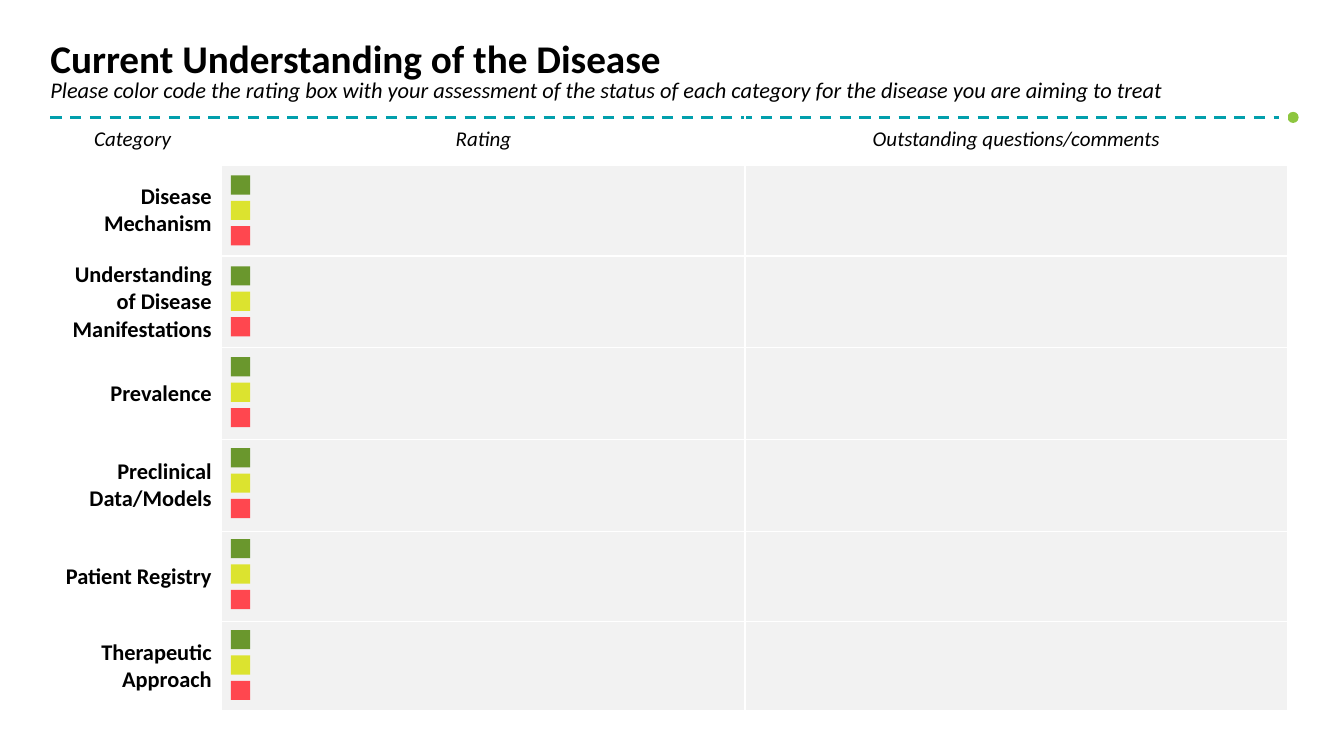
"""Build the disease understanding rating slide."""
from dataclasses import dataclass

from lxml.etree import SubElement
from pptx import Presentation
from pptx.dml.color import RGBColor
from pptx.enum.dml import MSO_LINE
from pptx.enum.shapes import MSO_CONNECTOR, MSO_SHAPE
from pptx.enum.text import MSO_ANCHOR, PP_ALIGN
from pptx.oxml.ns import qn
from pptx.util import Inches, Pt


@dataclass(frozen=True)
class Theme:
    font: str = "Calibri"
    text: str = "000000"
    rule: str = "019FAC"
    dot: str = "8DC63F"
    cell: str = "F2F2F2"
    border: str = "FFFFFF"
    ratings: tuple = ("6A972D", "DCE32F", "FF474F")
    title_size: int = 28
    body_size: int = 16
    header_size: int = 15


theme = Theme()


def set_font(font, size, bold=False, italic=False):
    font.name = theme.font
    font.size = Pt(size)
    font.bold = bold
    font.italic = italic
    font.color.rgb = RGBColor.from_string(theme.text)


def add_mark(kind, left, top, size, color):
    mark = page.shapes.add_shape(kind, Inches(left), Inches(top), Inches(size), Inches(size))
    mark.shadow.inherit = False
    mark.fill.solid()
    mark.fill.fore_color.rgb = RGBColor.from_string(color)
    mark.line.fill.background()


deck = Presentation()
deck.slide_width = Inches(13.33)
deck.slide_height = Inches(7.5)
page = deck.slides.add_slide(deck.slide_layouts[6])

rule = page.shapes.add_connector(
    MSO_CONNECTOR.STRAIGHT, Inches(0.5), Inches(1.17), Inches(12.69), Inches(1.17))
rule.line.color.rgb = RGBColor.from_string(theme.rule)
rule.line.width = Pt(2)
rule.line.dash_style = MSO_LINE.DASH
SubElement(rule.element.spPr, qn("a:effectLst"))
add_mark(MSO_SHAPE.OVAL, 12.77, 1.11, 0.11, theme.dot)

title_box = page.shapes.add_textbox(Inches(0.5), Inches(0.41), Inches(12.33), Inches(0.61))
frame = title_box.text_frame
frame.word_wrap = True
frame.vertical_anchor = MSO_ANCHOR.BOTTOM
frame.margin_left = frame.margin_right = frame.margin_top = frame.margin_bottom = 0
para = frame.paragraphs[0]
para.line_spacing = 0.8
span = para.add_run()
span.text = "Current Understanding of the Disease"
set_font(span.font, theme.title_size, bold=True)
para.add_line_break()
span = para.add_run()
span.text = ("Please color code the rating box with your assessment of the status "
             "of each category for the disease you are aiming to treat")
set_font(span.font, theme.body_size, italic=True)

headers = ["Category", "Rating", "Outstanding questions/comments"]
categories = ["Disease Mechanism", "Understanding of Disease Manifestations", "Prevalence",
              "Preclinical Data/Models", "Patient Registry", "Therapeutic Approach"]
column_widths = [1.77, 5.19, 5.38]
row_heights = [0.49, 0.91, 0.91, 0.91, 0.91, 0.9, 0.88]

table = page.shapes.add_table(
    len(row_heights), len(column_widths), Inches(0.43), Inches(1.14),
    Inches(sum(column_widths)), Inches(sum(row_heights))).table
table.first_row = False
table.horz_banding = False
for column, width in zip(table.columns, column_widths):
    column.width = Inches(width)

rows = [headers] + [[category, "", ""] for category in categories]
for row_index, (texts, height) in enumerate(zip(rows, row_heights)):
    table.rows[row_index].height = Inches(height)
    is_header = row_index == 0
    for column_index, text in enumerate(texts):
        cell = table.cell(row_index, column_index)
        cell.vertical_anchor = MSO_ANCHOR.MIDDLE
        para = cell.text_frame.paragraphs[0]
        para.text = text
        para.alignment = PP_ALIGN.CENTER if is_header else PP_ALIGN.RIGHT
        set_font(para.font, theme.header_size if is_header else theme.body_size,
                 bold=not is_header, italic=is_header)
        properties = cell._tc.get_or_add_tcPr()
        for side in ("lnL", "lnR", "lnT", "lnB"):
            width = Pt(3 if is_header and side == "lnB" else 1)
            border = SubElement(properties, qn(f"a:{side}"), w=str(width))
            fill = SubElement(border, qn("a:solidFill"))
            SubElement(fill, qn("a:srgbClr"), val=theme.border)
        if is_header or column_index == 0:
            cell.fill.background()
        else:
            cell.fill.solid()
            cell.fill.fore_color.rgb = RGBColor.from_string(theme.cell)

for category_index in range(len(categories)):
    for rating_index, color in enumerate(theme.ratings):
        top = 1.74 + 0.902 * category_index + 0.252 * rating_index
        add_mark(MSO_SHAPE.RECTANGLE, 2.29, top, 0.19, color)

deck.save("out.pptx")
